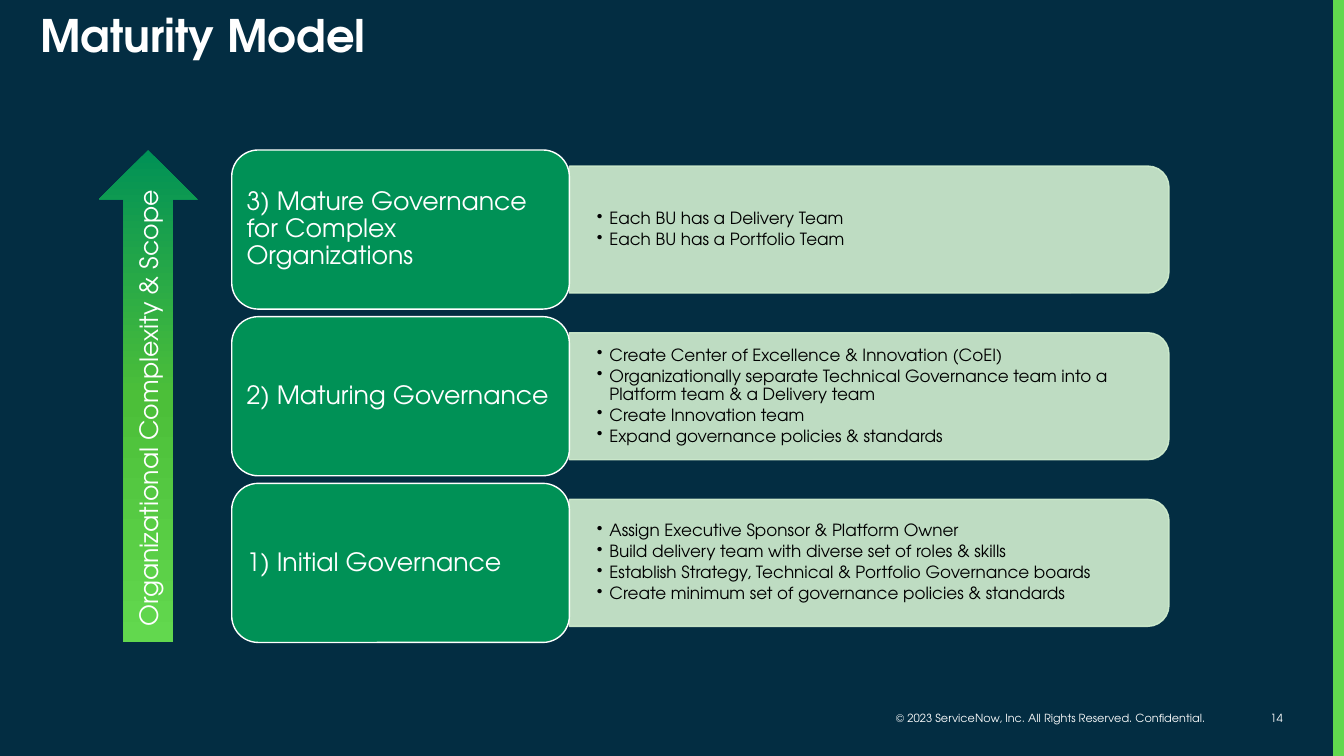
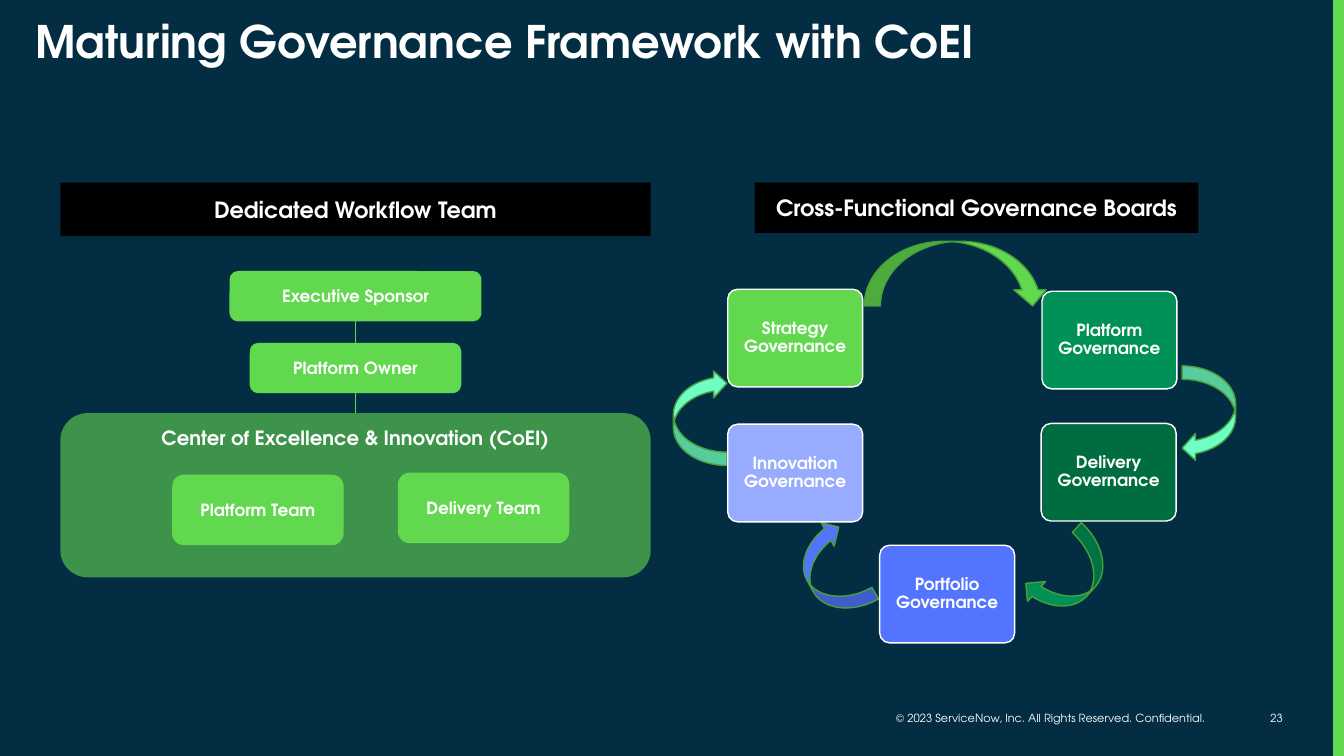
"""Build two slides on governance maturity."""
from dataclasses import dataclass

import pptx
import pptx.dml.color
import pptx.enum.shapes
import pptx.enum.text
import pptx.oxml
import pptx.oxml.ns
import pptx.util
from lxml import etree

Cm, Pt = pptx.util.Cm, pptx.util.Pt
KIND = pptx.enum.shapes.MSO_SHAPE
ALIGN = pptx.enum.text.PP_ALIGN
ANCHOR = pptx.enum.text.MSO_ANCHOR
qn = pptx.oxml.ns.qn


@dataclass(frozen=True)
class Theme:
    """Colours, font and type sizes."""
    font: str = "TeX Gyre Adventor"
    navy: str = "032D42"
    white: str = "FFFFFF"
    black: str = "000000"
    lime: str = "62D84E"
    grass: str = "4CBF39"
    green: str = "009156"
    forest: str = "006D40"
    pale: str = "D3F0D0"
    mint: str = "6DFFC4"
    blue: str = "5274FF"
    lilac: str = "97ACFF"
    edge: str = "49A03A"
    title: int = 32
    large: int = 18
    head: int = 16
    group: int = 14
    body: int = 12
    foot: int = 8


T = Theme()
WIDE, HIGH = 33.87, 19.05
FOOT = "© 2023 ServiceNow, Inc. All Rights Reserved. Confidential."

SCOPE = "Organizational Complexity & Scope"
LEVELS = [
    ("3) Mature Governance for Complex Organizations", [
        "Each BU has a Delivery Team",
        "Each BU has a Portfolio Team"]),
    ("2) Maturing Governance", [
        "Create Center of Excellence & Innovation (CoEI)",
        "Organizationally separate Technical Governance team into a "
        "Platform team & a Delivery team",
        "Create Innovation team",
        "Expand governance policies & standards"]),
    ("1) Initial Governance", [
        "Assign Executive Sponsor & Platform Owner",
        "Build delivery team with diverse set of roles & skills",
        "Establish Strategy, Technical & Portfolio Governance boards",
        "Create minimum set of governance policies & standards"]),
]

HEADS = [
    ("Dedicated Workflow Team", (1.52, 4.6, 14.88, 1.35)),
    ("Cross-Functional Governance Boards", (19.02, 4.6, 11.18, 1.27)),
]
CENTER = ("Center of Excellence & Innovation (CoEI)", (1.52, 10.41, 14.88, 4.14))
ROLES = [("Executive Sponsor", 6.83, 6.35), ("Platform Owner", 8.64, 5.33)]
TEAMS = [("Platform Team", 4.34, 11.96), ("Delivery Team", 10.03, 11.91)]
BOARDS = [
    ("Strategy Governance", 18.34, 7.29, T.lime),
    ("Platform Governance", 26.26, 7.34, T.green),
    ("Delivery Governance", 26.24, 10.67, T.forest),
    ("Portfolio Governance", 22.17, 13.74, T.blue),
    ("Innovation Governance", 18.34, 10.69, T.lilac),
]
ARROWS = [
    ((23.29, 4.57, 1.63, 4.65), 270, T.lime),
    ((29.79, 9.22, 1.35, 2.41), 0, T.mint),
    ((26.26, 13.31, 1.35, 2.41), 42.4, T.green),
    ((20.29, 13.16, 1.35, 2.41), 151.2, T.blue),
    ((16.97, 9.32, 1.35, 2.41), 180, T.mint),
]


def tint(code):
    """Turn a hex code into a colour."""
    return pptx.dml.color.RGBColor.from_string(code)


def fade(fill, part):
    """Make a solid colour partly clear, in percent."""
    node = fill._xPr.find(qn("a:solidFill"))[0]
    etree.SubElement(node, qn("a:alpha")).set("val", str(part * 1000))


def style(para, size, color=T.white, bold=False, align=ALIGN.LEFT, space=None):
    """Format a paragraph and its runs."""
    para.alignment = align
    if space:
        para.line_spacing = space
    for run in para.runs:
        font = run.font
        font.name, font.size, font.bold = T.font, Pt(size), bold
        font.color.rgb = tint(color)


def inset(frame, side, top):
    """Set the inner margins of a text frame."""
    frame.margin_left = frame.margin_right = Cm(side)
    frame.margin_top = frame.margin_bottom = Cm(top)


def write(shape, text, size, anchor=ANCHOR.MIDDLE, **look):
    """Put one styled paragraph in a shape."""
    frame = shape.text_frame
    frame.word_wrap = True
    frame.vertical_anchor = anchor
    frame.text = text
    style(frame.paragraphs[0], size, **look)
    return frame


def draw(slide, kind, box, fill, line=None):
    """Add a flat preset shape."""
    shape = slide.shapes.add_shape(kind, *map(Cm, box))
    shape.shadow.inherit = False
    shape.fill.solid()
    shape.fill.fore_color.rgb = tint(fill)
    if line:
        shape.line.color.rgb = tint(line)
        shape.line.width = Pt(1)
    else:
        shape.line.fill.background()
    return shape


def block(slide, kind, box, text, size, fill=T.lime):
    """Add a filled shape with a bold centred label."""
    shape = draw(slide, kind, box, fill)
    write(shape, text, size, bold=True, align=ALIGN.CENTER)
    return shape


def start(deck, text, left, top, page):
    """Add a slide with title, side band and footer."""
    slide = deck.slides.add_slide(deck.slide_layouts[5])
    title = slide.shapes.title
    title.left, title.top, title.width, title.height = map(
        Cm, (left, top, 30.5, 1.98))
    write(title, text, T.title, ANCHOR.TOP, bold=True, space=0.9)
    draw(slide, KIND.RECTANGLE, (33.6, 0, 0.27, HIGH), T.lime)
    for words, box, anchor in [
            (FOOT, (22.05, 17.81, 8.59, 0.58), ANCHOR.MIDDLE),
            (page, (30.73, 17.81, 1.85, 0.64), ANCHOR.TOP)]:
        note = slide.shapes.add_textbox(*map(Cm, box))
        write(note, words, T.foot, anchor, align=ALIGN.RIGHT)
    return slide


def bullets(slide, box, items):
    """Add a bulleted list, centred in its box."""
    frame = slide.shapes.add_textbox(*map(Cm, box)).text_frame
    frame.word_wrap = True
    frame.vertical_anchor = ANCHOR.MIDDLE
    inset(frame, 0.69, 0.36)
    frame.text = "\n".join(items)
    for para in frame.paragraphs:
        props = para._p.get_or_add_pPr()
        props.set("marL", str(Cm(0.32)))
        props.set("indent", str(-Cm(0.32)))
        etree.SubElement(props, qn("a:buChar")).set("char", "•")
        para.space_after = Pt(2)
        style(para, T.body, T.black, space=0.9)


def blend(shape, stops):
    """Fill a shape with a gradient from top to bottom."""
    fill = shape.fill
    fill.gradient()
    grad = shape._element.spPr.find(qn("a:gradFill"))
    marks = grad.find(qn("a:gsLst"))
    for old in list(marks):
        marks.remove(old)
    for place, color in stops:
        mark = etree.SubElement(marks, qn("a:gs"), pos=str(place * 1000))
        etree.SubElement(mark, qn("a:srgbClr"), val=color)
    fill.gradient_angle = 270


def model(deck):
    """Build the slide of maturity levels."""
    slide = start(deck, "Maturity Model", 0.76, 0.23, "14")
    left, top, wide, high, step = 5.84, 3.78, 8.51, 4.01, 4.2
    long, thick = 15.11, 3.2
    edge = left + wide
    for row, (name, items) in enumerate(LEVELS):
        y = top + row * step
        mid = y + high / 2
        bar = draw(slide, KIND.ROUND_2_SAME_RECTANGLE,
                   (edge + (long - thick) / 2, mid - long / 2, thick, long),
                   T.pale, T.pale)
        bar.rotation = 90
        fade(bar.fill, 90)
        fade(bar.line.fill, 90)
        bullets(slide, (edge, mid - thick / 2, long, thick), items)
        label = draw(slide, KIND.ROUNDED_RECTANGLE, (left, y, wide, high),
                     T.green, T.white)
        inset(write(label, name, T.large, space=0.9), 0.18, 0.1)
    arrow = draw(slide, KIND.UP_ARROW,
                 (2.49, top, 2.49, 2 * step + high), T.green)
    blend(arrow, [(0, T.green), (50, T.grass), (100, T.lime)])
    frame = write(arrow, SCOPE, T.large, align=ALIGN.CENTER)
    frame._txBody.bodyPr.set("vert", "vert270")


def link(slide, above, below):
    """Join two boxes from bottom to top."""
    wire = slide.shapes.add_connector(
        pptx.enum.shapes.MSO_CONNECTOR.STRAIGHT, 0, 0, 0, 0)
    wire.begin_connect(above, 2)
    wire.end_connect(below, 0)
    wire.line.color.rgb = tint(T.lime)
    wire.line.width = Pt(1)
    etree.SubElement(wire._element.spPr, qn("a:effectLst"))


def frame(deck):
    """Build the slide of teams and boards."""
    slide = start(deck, "Maturing Governance Framework with CoEI",
                  0.64, 0.38, "23")
    round_box = KIND.ROUNDED_RECTANGLE
    for text, box in HEADS:
        block(slide, KIND.RECTANGLE, box, text, T.head, T.black)

    text, box = CENTER
    center = block(slide, round_box, box, text, T.group)
    center.text_frame.vertical_anchor = ANCHOR.TOP
    fade(center.fill, 60)
    axis = box[0] + box[2] / 2
    chain = [block(slide, round_box, (axis - wide / 2, top, wide, 1.27),
                   name, T.body) for name, top, wide in ROLES] + [center]
    for above, below in zip(chain, chain[1:]):
        link(slide, above, below)
    for name, left, top in TEAMS:
        block(slide, round_box, (left, top, 4.32, 1.78), name, T.body)

    for box, turn, color in ARROWS:
        arrow = draw(slide, KIND.CURVED_LEFT_ARROW, box, color, T.edge)
        arrow.rotation = turn
    for name, left, top, color in BOARDS:
        card = draw(slide, round_box, (left, top, 3.4, 2.46), color, T.white)
        card.adjustments[0] = 0.1
        inset(write(card, name, T.body, bold=True, align=ALIGN.CENTER,
                    space=0.9), 0.2, 0.2)


def main():
    """Build and save the deck."""
    deck = pptx.Presentation()
    deck.slide_width, deck.slide_height = Cm(WIDE), Cm(HIGH)
    back = deck.slide_master.background.fill
    back.solid()
    back.fore_color.rgb = tint(T.navy)
    model(deck)
    frame(deck)
    deck.save("out.pptx")


if __name__ == "__main__":
    main()
